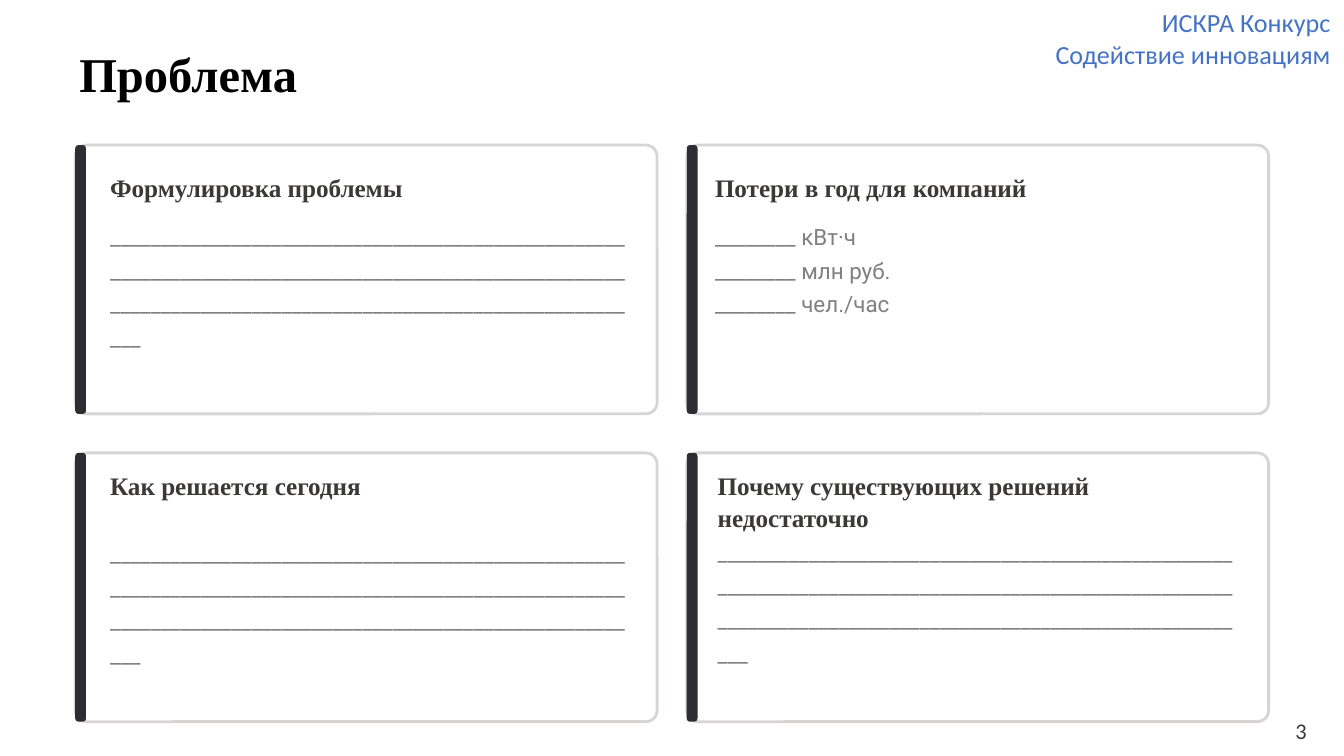
"""Build the "Проблема" slide: four cards with fields to fill in."""
from pptx import Presentation
from pptx.dml.color import RGBColor
from pptx.enum.shapes import MSO_SHAPE as Shape
from pptx.enum.text import MSO_ANCHOR as Anchor, PP_ALIGN as Align
from pptx.util import Inches, Pt

WHITE = RGBColor(0xFF, 0xFF, 0xFF)
BLACK = RGBColor(0x00, 0x00, 0x00)
BORDER = RGBColor(0xD8, 0xD4, 0xD4)
ACCENT = RGBColor(0x2D, 0x2E, 0x34)
HEADING = RGBColor(0x3D, 0x38, 0x38)
BODY = RGBColor(0x80, 0x80, 0x80)
BLUE = RGBColor(0x44, 0x72, 0xC4)
NUMBER = RGBColor(0x3B, 0x38, 0x38)

TITLE = "Проблема"
CONTEST = ["ИСКРА Конкурс", "Содействие инновациям"]
PAGE_NUMBER = "3"
BLANK_FIELD = "_" * 156
SHORT_FIELD = "_" * 8
LOSSES = [f"{SHORT_FIELD} {unit}" for unit in ("кВт·ч", "млн руб.", "чел./час")]
CARDS = [
    {"heading": "Формулировка проблемы", "heading_area": (0.82, 1.27, 2.73, 0.24),
     "body": [BLANK_FIELD], "body_area": (0.82, 1.61, 3.88, 1.27)},
    {"heading": "Потери в год для компаний", "heading_area": (5.32, 1.27, 2.89, 0.24),
     "body": LOSSES, "body_area": (5.32, 1.61, 3.88, 1.53)},
    {"heading": "Как решается сегодня", "heading_area": (0.82, 3.49, 2.33, 0.24),
     "body": [BLANK_FIELD], "body_area": (0.82, 3.97, 3.88, 0.51)},
    {"heading": "Почему существующих решений недостаточно",
     "heading_area": (5.34, 3.49, 3.88, 0.48),
     "body": [BLANK_FIELD], "body_area": (5.34, 3.96, 3.88, 0.51)},
]

COLUMNS = 2
LEFT, TOP = 0.56, 1.08
CARD_WIDTH, CARD_HEIGHT = 4.33, 2
COLUMN_STEP, ROW_STEP = 4.55, 2.29
BAR_WIDTH = 0.08


def add_panel(page, left, top, width, corner, fill, border=None):
    panel = page.shapes.add_shape(
        Shape.ROUNDED_RECTANGLE, Inches(left), Inches(top), Inches(width), Inches(CARD_HEIGHT))
    panel.adjustments[0] = corner
    panel.shadow.inherit = False
    panel.fill.solid()
    panel.fill.fore_color.rgb = fill
    if border is None:
        panel.line.fill.background()
    else:
        panel.line.color.rgb = border
        panel.line.width = Pt(1.5)


def add_text(page, area, lines, font, size, color, bold=False, spacing=None,
             align=Align.LEFT, inset=(0, 0), wrap=True):
    box = page.shapes.add_textbox(*map(Inches, area))
    frame = box.text_frame
    frame.word_wrap = wrap
    frame.vertical_anchor = Anchor.TOP
    frame.margin_left = frame.margin_right = Inches(inset[0])
    frame.margin_top = frame.margin_bottom = Inches(inset[1])
    for index, line in enumerate(lines):
        para = frame.add_paragraph() if index else frame.paragraphs[0]
        para.alignment = align
        if spacing:
            para.line_spacing = Pt(spacing)
        span = para.add_run()
        span.text = line
        span.font.name = font
        span.font.size = Pt(size)
        span.font.bold = bold
        span.font.color.rgb = color


def add_card(page, index, card):
    row, column = divmod(index, COLUMNS)
    left = LEFT + column * COLUMN_STEP
    top = TOP + row * ROW_STEP
    add_panel(page, left, top, CARD_WIDTH, 0.042, WHITE, BORDER)
    add_panel(page, left, top, BAR_WIDTH, 0.304, ACCENT)
    add_text(page, card["heading_area"], [card["heading"]], "Times New Roman", 13.5,
             HEADING, bold=True, spacing=17)
    add_text(page, card["body_area"], card["body"], "Roboto", 12, BODY, spacing=18)


def main():
    deck = Presentation()
    deck.slide_width = Inches(10)
    deck.slide_height = deck.slide_width * 9 // 16
    page = deck.slides.add_slide(deck.slide_layouts[6])
    page.background.fill.solid()
    page.background.fill.fore_color.rgb = WHITE
    add_text(page, (7.73, 0, 2.27, 0.57), CONTEST, "Calibri", 14, BLUE,
             align=Align.RIGHT, inset=(0.1, 0.05), wrap=False)
    add_text(page, (0.59, 0.31, 3.64, 0.46), [TITLE], "Times New Roman", 26, BLACK,
             bold=True, spacing=32.5)
    for index, card in enumerate(CARDS):
        add_card(page, index, card)
    add_text(page, (9.54, 5.29, 0.54, 0.45), [PAGE_NUMBER], "Calibri", 12, NUMBER,
             inset=(0.1, 0.05))
    deck.save("out.pptx")


if __name__ == "__main__":
    main()
